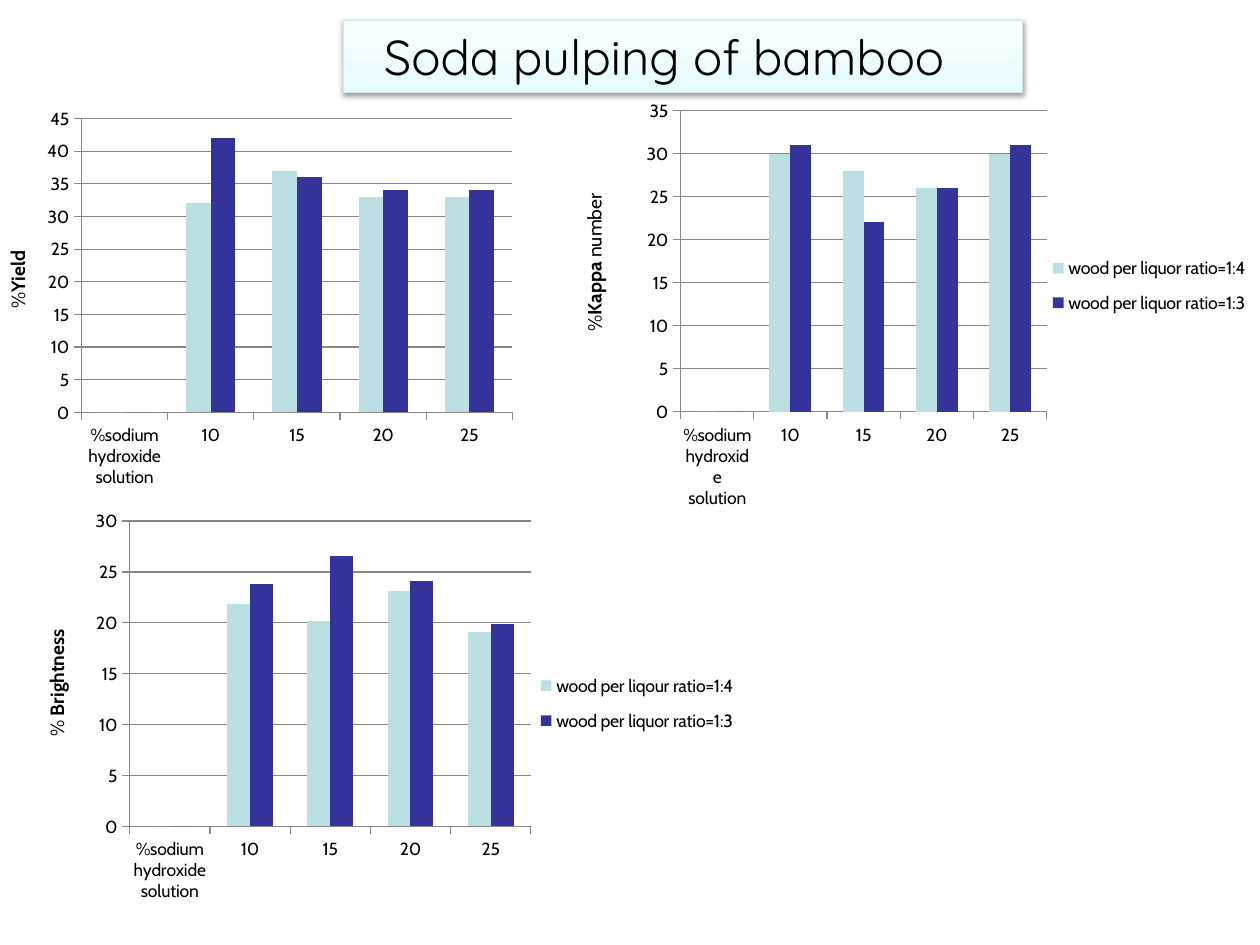
"""Build the bamboo soda pulping slide with three column charts."""
from lxml.etree import SubElement
from pptx import Presentation
from pptx.chart.data import CategoryChartData
from pptx.dml.color import RGBColor
from pptx.enum.chart import XL_CHART_TYPE as ChartType, XL_LEGEND_POSITION as LegendPos
from pptx.enum.shapes import MSO_SHAPE as Shape
from pptx.enum.text import MSO_ANCHOR as Anchor, PP_ALIGN as Align
from pptx.oxml import parse_xml
from pptx.oxml.ns import nsdecls, qn
from pptx.util import Cm, Pt

BLACK = RGBColor(0, 0, 0)
GREY = RGBColor(0x86, 0x86, 0x86)
PALE = RGBColor(0xBB, 0xE0, 0xE3)
NAVY = RGBColor(0x33, 0x33, 0x99)
BANNER_LOW = RGBColor(0xE6, 0xFD, 0xFF)
BANNER_HIGH = RGBColor(0xF8, 0xFE, 0xFF)
BANNER_EDGE = RGBColor(0xD5, 0xE8, 0xEA)

HEAD_FONT, BODY_FONT = "Quicksand", "Cabin"
CATEGORIES = ["%sodium hydroxide solution", "10", "15", "20", "25"]


def style_font(font, name, size, bold=None):
    font.name, font.size, font.bold = name, Pt(size), bold
    font.color.rgb = BLACK


def add_banner(slide, box, text):
    sp = slide.shapes.add_shape(Shape.RECTANGLE, *map(Cm, box))
    sp.fill.gradient()
    sp.fill.gradient_angle = 90
    for stop, color in zip(sp.fill.gradient_stops, (BANNER_LOW, BANNER_HIGH)):
        stop.color.rgb = color
    sp.line.color.rgb = BANNER_EDGE
    sp.line.width = Pt(0.75)
    sp.shadow.inherit = False
    effects = sp._element.spPr.find(qn("a:effectLst"))
    effects.append(parse_xml(
        f'<a:outerShdw {nsdecls("a")} blurRad="{Pt(3.1)}" dist="{Pt(1.6)}" '
        'dir="5400000" rotWithShape="0"><a:srgbClr val="000000">'
        '<a:alpha val="38000"/></a:srgbClr></a:outerShdw>'))
    tf = sp.text_frame
    tf.text = text
    tf.vertical_anchor = Anchor.MIDDLE
    tf.margin_left = Cm(0.81)
    p = tf.paragraphs[0]
    p.alignment = Align.LEFT
    style_font(p.runs[0].font, HEAD_FONT, 28)


def add_axis_label(slide, box, parts):
    sp = slide.shapes.add_textbox(*map(Cm, box))
    sp.rotation = 270
    tf = sp.text_frame
    tf.word_wrap = True
    for text, bold in parts:
        r = tf.paragraphs[0].add_run()
        r.text = text
        style_font(r.font, BODY_FONT, 11, bold)


def set_layout(parent, index, box, inner=False):
    for old in parent.findall(qn("c:layout")):
        parent.remove(old)
    layout = parse_xml(f'<c:layout {nsdecls("c")}><c:manualLayout/></c:layout>')
    values = [("xMode", "edge"), ("yMode", "edge"), *zip("xywh", box)]
    if inner:
        values.insert(0, ("layoutTarget", "inner"))
    for tag, value in values:
        SubElement(layout[0], qn(f"c:{tag}")).set("val", str(value))
    parent.insert(index, layout)


def add_columns(slide, box, plot_box, top, step, series, legend_box=None):
    data = CategoryChartData()
    data.categories = CATEGORIES
    for name, values in series:
        data.add_series(name, values)
    chart = slide.shapes.add_chart(
        ChartType.COLUMN_CLUSTERED, *map(Cm, box), data).chart
    style_font(chart.font, BODY_FONT, 10)
    chart.has_title = False
    plot = chart.plots[0]
    plot.gap_width, plot.overlap = 150, 0
    plot.vary_by_categories = False
    for ser, color in zip(plot.series, (PALE, NAVY)):
        ser.format.fill.solid()
        ser.format.fill.fore_color.rgb = color
    axis = chart.value_axis
    axis.minimum_scale, axis.maximum_scale, axis.major_unit = 0, top, step
    axis.has_major_gridlines = True
    for part in (axis, axis.major_gridlines, chart.category_axis):
        part.format.line.color.rgb = GREY
        part.format.line.width = Pt(0.75)
    set_layout(chart._chartSpace.chart.plotArea, 0, plot_box, inner=True)
    chart.has_legend = legend_box is not None
    if legend_box:
        legend = chart.legend
        legend.position = LegendPos.RIGHT
        legend.include_in_layout = False
        style_font(legend.font, BODY_FONT, 10.1)
        set_layout(legend._element, 1, legend_box)


def main():
    prs = Presentation()
    prs.slide_width, prs.slide_height = Cm(25.4), Cm(19.05)
    slide = prs.slides.add_slide(prs.slide_layouts[6])
    add_banner(slide, (6.93, 0.41, 13.69, 1.45), "Soda pulping of bamboo")

    add_columns(slide, (0, 1.98, 17.48, 8.74), (0.094, 0.047, 0.497, 0.678), 45, 5,
                [("Series 1", (0, 32, 37, 33, 33)),
                 ("Series 2", (0, 42, 36, 34, 34))])
    add_axis_label(slide, (-0.69, 5.05, 2.11, 0.74), [("%", None), ("Yield", True)])

    add_columns(slide, (10.52, 1.78, 14.88, 8.74), (0.215, 0.052, 0.496, 0.694), 35, 5,
                [("wood per liquor ratio=1:4", (0, 30, 28, 26, 30)),
                 ("wood per liquor ratio=1:3", (0, 31, 22, 26, 31))],
                (0.71, 0.36, 0.28, 0.19))
    add_axis_label(slide, (10.52, 4.65, 3.38, 1.19),
                   [("%", None), ("Kappa", True), (" number", False)])

    add_columns(slide, (0, 10.11, 15.29, 8.94), (0.171, 0.044, 0.529, 0.689), 30, 5,
                [("wood per liqour ratio=1:4", (0, 21.8, 20.2, 23.1, 19.1)),
                 ("wood per liquor ratio=1:3", (0, 23.8, 26.6, 24.1, 19.9))],
                (0.7, 0.36, 0.28, 0.19))
    add_axis_label(slide, (-0.53, 13.03, 3.38, 0.76),
                   [("% ", None), ("Brightness", True)])
    prs.save("out.pptx")


if __name__ == "__main__":
    main()
